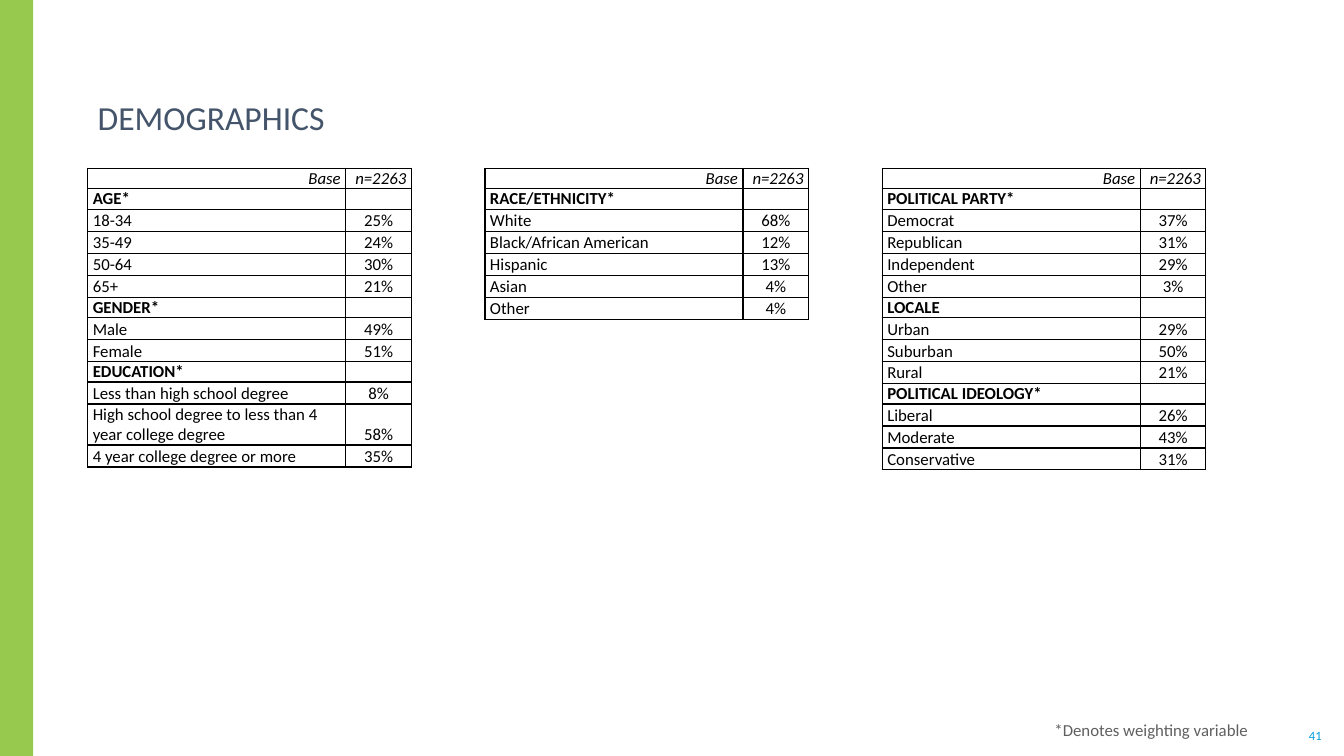
from dataclasses import dataclass
from typing import Optional

from lxml.etree import SubElement
from pptx import Presentation
from pptx.dml.color import RGBColor
from pptx.enum.shapes import MSO_SHAPE
from pptx.enum.text import MSO_ANCHOR as Anchor, MSO_AUTO_SIZE as AutoSize, PP_ALIGN as Align
from pptx.oxml.ns import qn
from pptx.slide import Slide
from pptx.table import _Cell as Cell
from pptx.text.text import TextFrame, _Paragraph as Paragraph
from pptx.util import Inches, Pt


@dataclass(frozen=True)
class Theme:
    font: str = "Calibri"
    accent: str = "96C94D"
    title: str = "44546A"
    body: str = "000000"
    note: str = "5F5F5F"
    page: str = "009DD9"
    title_size: int = 24
    body_size: int = 12
    page_size: int = 9


@dataclass(frozen=True)
class Row:
    label: str
    value: str = ""
    height: float = 0.14


@dataclass(frozen=True)
class Section:
    heading: str
    rows: tuple[Row, ...]


@dataclass(frozen=True)
class TextStyle:
    size: int
    color: str
    align: Align = Align.LEFT
    bold: bool = False
    italic: bool = False
    spacing: Optional[float] = None


@dataclass(frozen=True)
class Label:
    text: str
    box: tuple[float, float, float, float]
    style: TextStyle
    inset: tuple[float, float] = (0.1, 0.05)
    anchor: Anchor = Anchor.TOP
    wrap: bool = False
    space_after: int = 0


THEME = Theme()
TABLE_LEFT, TABLE_TOP, TABLE_PITCH = 0.87, 1.67, 3.94
COLUMN_WIDTHS = (2.56, 0.65)

TABLES = (
    (
        Section("AGE*", (Row("18-34", "25%"), Row("35-49", "24%"),
                         Row("50-64", "30%"), Row("65+", "21%"))),
        Section("GENDER*", (Row("Male", "49%"), Row("Female", "51%"))),
        Section("EDUCATION*", (
            Row("Less than high school degree", "8%"),
            Row("High school degree to less than 4 year college degree", "58%", 0.28),
            Row("4 year college degree or more", "35%"),
        )),
    ),
    (
        Section("RACE/ETHNICITY*", (
            Row("White", "68%"), Row("Black/African American", "12%"),
            Row("Hispanic", "13%"), Row("Asian", "4%"), Row("Other", "4%"),
        )),
    ),
    (
        Section("POLITICAL PARTY*", (Row("Democrat", "37%"), Row("Republican", "31%"),
                                     Row("Independent", "29%"), Row("Other", "3%"))),
        Section("LOCALE", (Row("Urban", "29%"), Row("Suburban", "50%"), Row("Rural", "21%"))),
        Section("POLITICAL IDEOLOGY*", (Row("Liberal", "26%"), Row("Moderate", "43%"),
                                        Row("Conservative", "31%"))),
    ),
)

LABELS = (
    Label("DEMOGRAPHICS", (0.87, 0.74, 11.91, 0.62),
          TextStyle(THEME.title_size, THEME.title, spacing=0.85),
          inset=(0.1, 0), anchor=Anchor.BOTTOM, wrap=True),
    Label("*Denotes weighting variable", (10.36, 7.08, 2.14, 0.31),
          TextStyle(THEME.body_size, THEME.note, spacing=1.07), space_after=8),
    Label("41", (12.97, 7.22, 0.15, 0.15),
          TextStyle(THEME.page_size, THEME.page, Align.CENTER),
          inset=(0, 0), anchor=Anchor.MIDDLE),
)

BASE = TextStyle(THEME.body_size, THEME.body, Align.RIGHT, italic=True)
HEADING = TextStyle(THEME.body_size, THEME.body, bold=True)
CATEGORY = TextStyle(THEME.body_size, THEME.body)
SHARE = TextStyle(THEME.body_size, THEME.body, Align.CENTER, spacing=1.07)


def write(paragraph: Paragraph, text: str, style: TextStyle) -> None:
    paragraph.alignment = style.align
    if style.spacing:
        paragraph.line_spacing = style.spacing
    run = paragraph.add_run()
    run.text = text
    run.font.name = THEME.font
    run.font.size = Pt(style.size)
    run.font.bold = style.bold
    run.font.italic = style.italic
    run.font.color.rgb = RGBColor.from_string(style.color)


def add_label(slide: Slide, label: Label) -> None:
    shape = slide.shapes.add_textbox(*map(Inches, label.box))
    frame: TextFrame = shape.text_frame
    frame.word_wrap = label.wrap
    frame.auto_size = AutoSize.NONE if label.wrap else AutoSize.SHAPE_TO_FIT_TEXT
    frame.vertical_anchor = label.anchor
    frame.margin_left = frame.margin_right = Inches(label.inset[0])
    frame.margin_top = frame.margin_bottom = Inches(label.inset[1])
    paragraph = frame.paragraphs[0]
    paragraph.space_after = Pt(label.space_after)
    write(paragraph, label.text, label.style)


def add_borders(cell: Cell) -> None:
    properties = cell._tc.get_or_add_tcPr()
    for side in ("a:lnL", "a:lnR", "a:lnT", "a:lnB"):
        line = SubElement(properties, qn(side), w=str(Pt(1)))
        fill = SubElement(line, qn("a:solidFill"))
        SubElement(fill, qn("a:srgbClr"), val=THEME.body)


def fill_cell(cell: Cell, text: str, style: TextStyle) -> None:
    add_borders(cell)
    cell.fill.background()
    cell.vertical_anchor = Anchor.BOTTOM
    cell.margin_left = cell.margin_right = Inches(0.07 if style is SHARE else 0.05)
    cell.margin_top = cell.margin_bottom = Inches(0)
    paragraph = cell.text_frame.paragraphs[0]
    if text:
        write(paragraph, text, style)
    else:
        SubElement(paragraph._p, qn("a:endParaRPr"), sz=str(style.size * 100))


def add_demographic_table(slide: Slide, left: float, sections: tuple[Section, ...]) -> None:
    entries = [(Row("Base", "n=2263"), BASE, BASE)]
    for section in sections:
        entries.append((Row(section.heading), HEADING, HEADING))
        entries.extend((row, CATEGORY, SHARE) for row in section.rows)
    height = sum(row.height for row, _, _ in entries)
    table = slide.shapes.add_table(
        len(entries), len(COLUMN_WIDTHS), Inches(left), Inches(TABLE_TOP),
        Inches(sum(COLUMN_WIDTHS)), Inches(height)).table
    table.first_row = False
    table.horz_banding = False
    for column, width in zip(table.columns, COLUMN_WIDTHS):
        column.width = Inches(width)
    for index, (row, label_style, value_style) in enumerate(entries):
        table.rows[index].height = Inches(row.height)
        fill_cell(table.cell(index, 0), row.label, label_style)
        fill_cell(table.cell(index, 1), row.value, value_style)


def add_side_band(slide: Slide) -> None:
    band = slide.shapes.add_shape(
        MSO_SHAPE.RECTANGLE, Inches(0), Inches(0), Inches(0.33), Inches(7.5))
    band.shadow.inherit = False
    band.fill.solid()
    band.fill.fore_color.rgb = RGBColor.from_string(THEME.accent)
    band.line.fill.background()


def main() -> None:
    presentation = Presentation()
    presentation.slide_width = Inches(13.33)
    presentation.slide_height = Inches(7.5)
    slide = presentation.slides.add_slide(presentation.slide_layouts[6])
    add_side_band(slide)
    for index, sections in enumerate(TABLES):
        add_demographic_table(slide, TABLE_LEFT + index * TABLE_PITCH, sections)
    for label in LABELS:
        add_label(slide, label)
    presentation.save("out.pptx")


if __name__ == "__main__":
    main()
